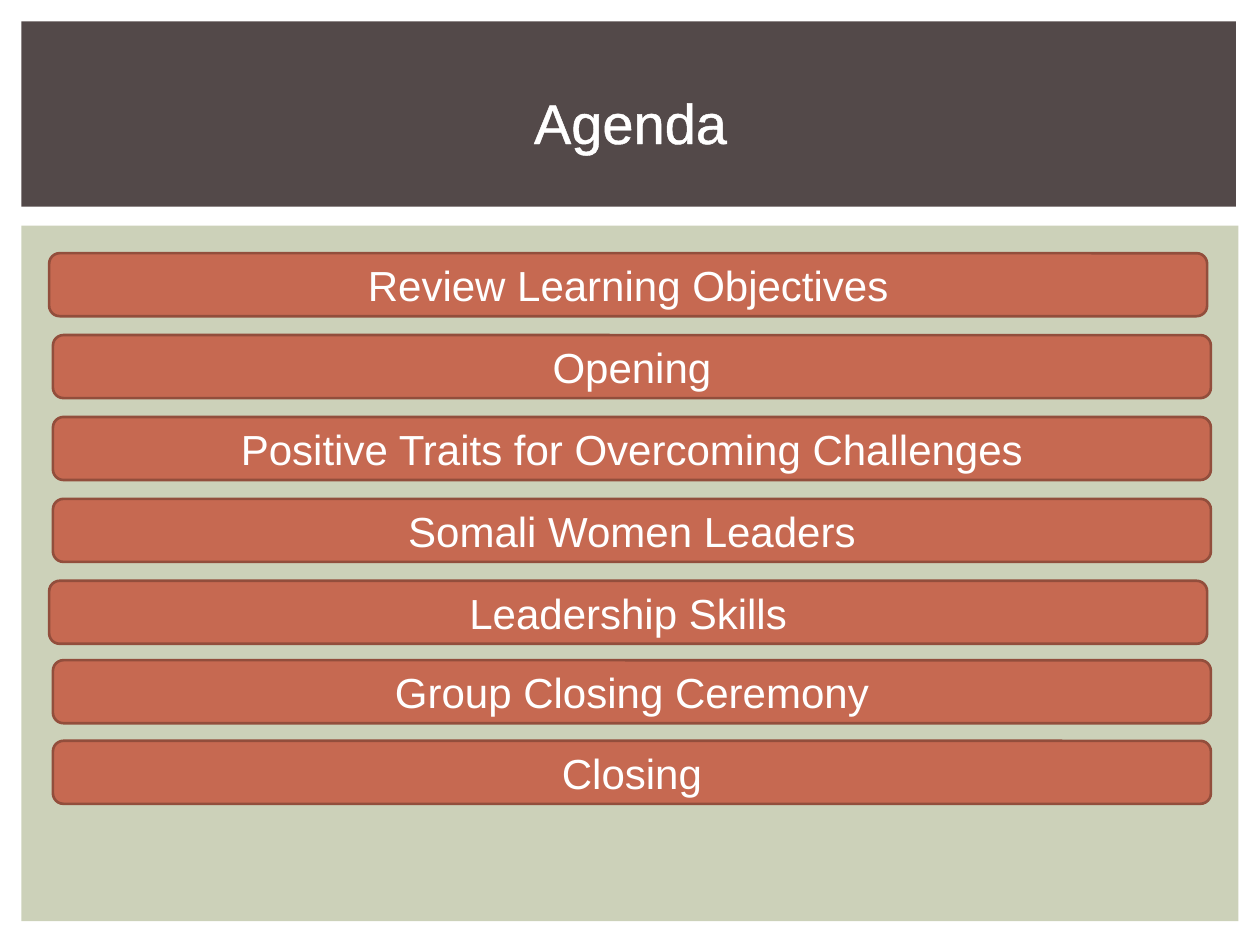
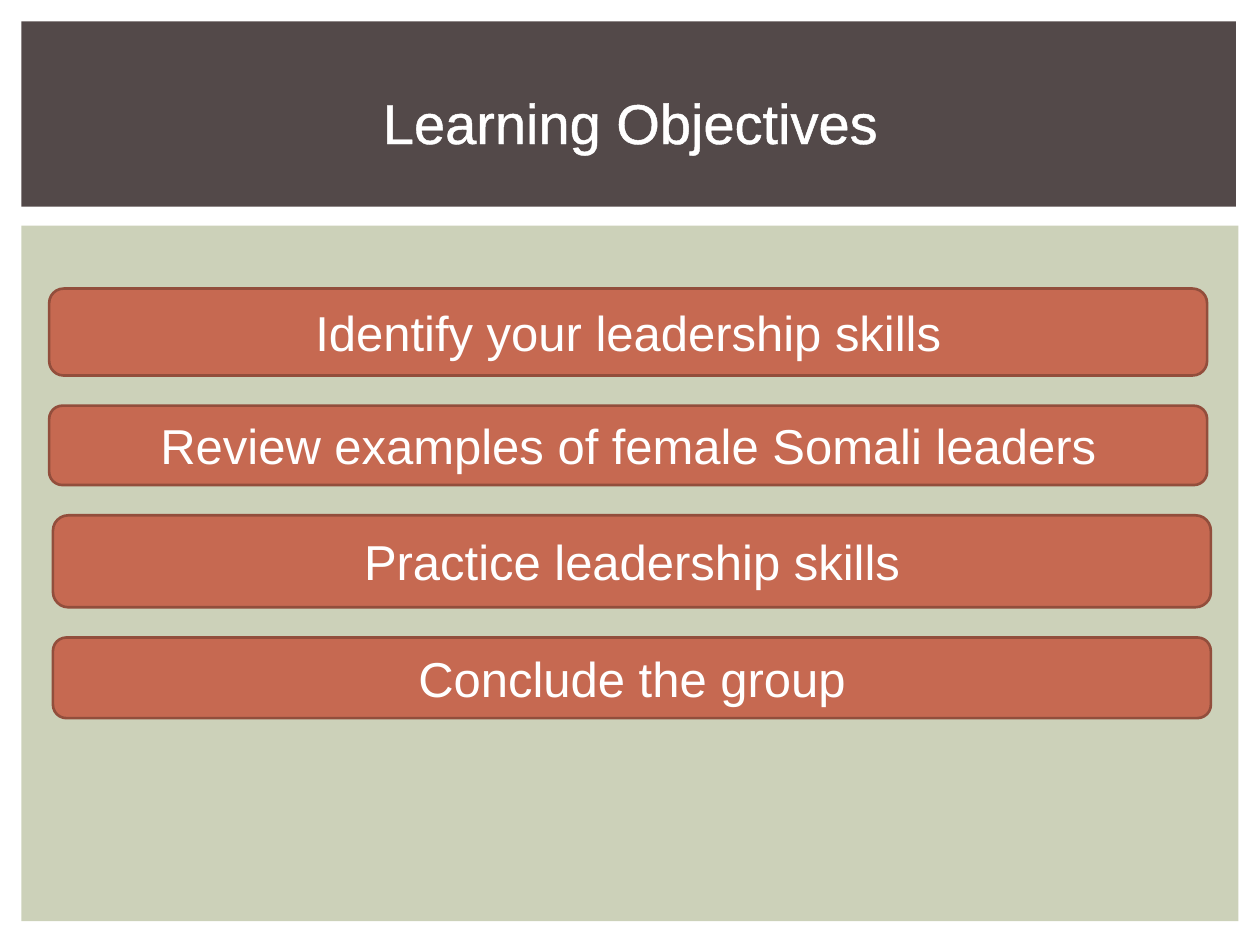
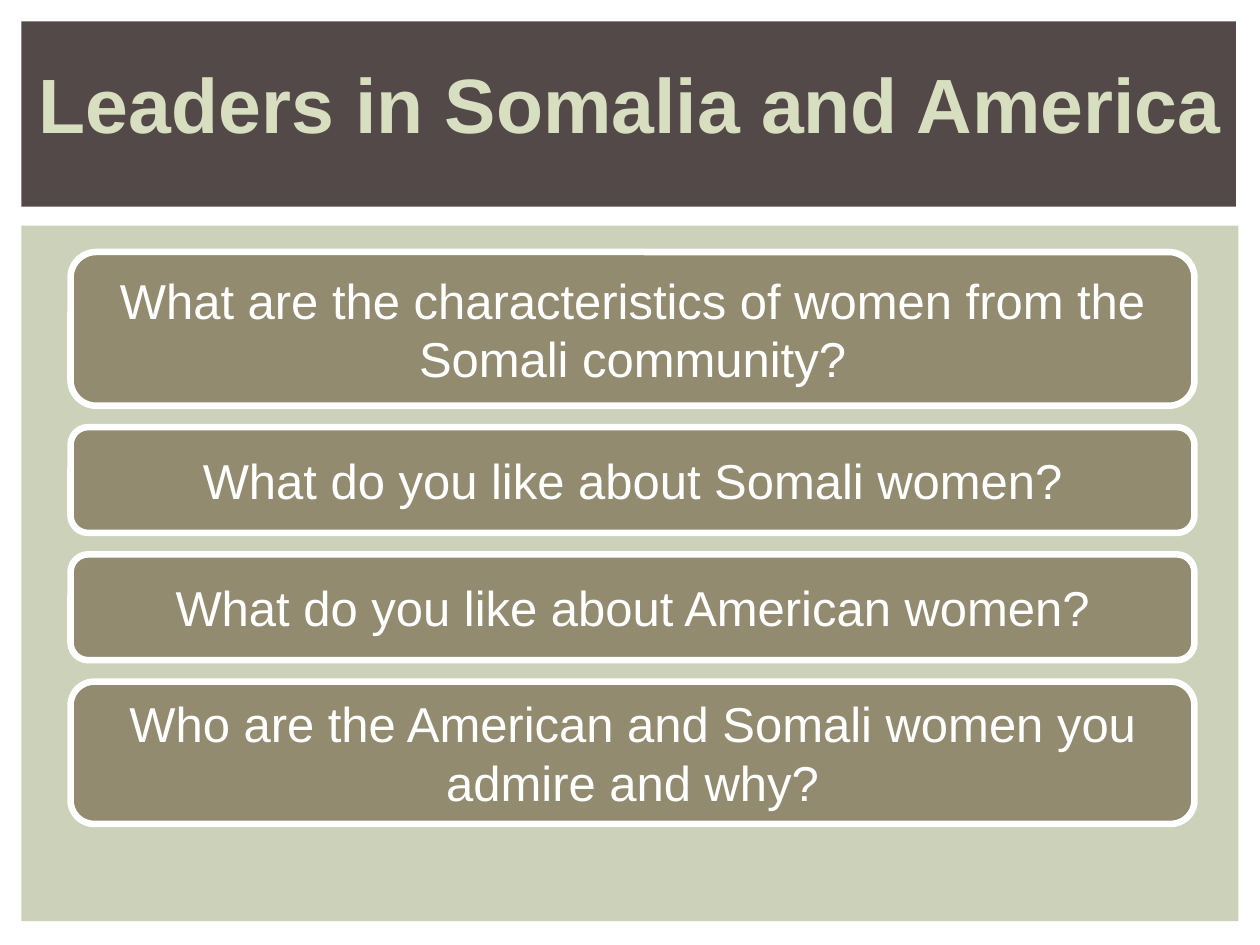
from lxml import etree
from pptx import Presentation
from pptx import util as u
from pptx.dml.color import RGBColor
from pptx.enum import shapes, text
from pptx.oxml import ns

WHITE = RGBColor(0xFF, 0xFF, 0xFF)
SAGE = RGBColor(0xCC, 0xD1, 0xB9)
PALE_SAGE = RGBColor(0xD8, 0xDE, 0xC0)
UMBER = RGBColor(0x53, 0x49, 0x49)
DARK_UMBER = RGBColor(0x56, 0x46, 0x46)
TERRACOTTA = RGBColor(0xC6, 0x69, 0x51)
DARK_TERRACOTTA = RGBColor(0x92, 0x4E, 0x3C)
OLIVE = RGBColor(0x92, 0x8B, 0x70)

FONT = "Arial"
BANDS = [((0.17, 1.79, 9.66, 5.52), SAGE), ((0.17, 0.17, 9.64, 1.47), UMBER)]
TITLE_BOX = (0.42, 0.39, 9.17, 1.15)
WIDE_TITLE_BOX = (0.16, 0.4, 9.69, 0.84)
LEFT, RIGHT = 0, 0.03

AGENDA_MAIN = [
    ("Review Learning Objectives", LEFT, 0.5),
    ("Opening", RIGHT, 0.5),
    ("Positive Traits for Overcoming Challenges", RIGHT, 0.5),
    ("Somali Women Leaders", RIGHT, 0.5),
    ("Leadership Skills", LEFT, 0.5),
]
AGENDA_CLOSE = [
    ("Group Closing Ceremony", RIGHT, 0.5),
    ("Closing", RIGHT, 0.5),
]
OBJECTIVES = [
    ("Identify your leadership skills", LEFT, 0.69),
    ("Review examples of female Somali leaders", LEFT, 0.63),
    ("Practice leadership skills", RIGHT, 0.73),
    ("Conclude the group", RIGHT, 0.64),
]
QUESTIONS = [
    ("What are the characteristics of women from the Somali community?", LEFT, 1.22),
    ("What do you like about Somali women?", LEFT, 0.84),
    ("What do you like about American women?", LEFT, 0.84),
    ("Who are the American and Somali women you admire and why?", LEFT, 1.13),
]
TERRACOTTA_STYLE = (TERRACOTTA, DARK_TERRACOTTA, 1.5)
OLIVE_STYLE = (OLIVE, WHITE, 3.75)


def add_filled(slide, kind, box, fill):
    shape = slide.shapes.add_shape(kind, *map(u.Inches, box))
    shape.shadow.inherit = False
    shape.fill.solid()
    shape.fill.fore_color.rgb = fill
    return shape


def write(frame, words, size, color):
    paragraph = frame.paragraphs[0]
    paragraph.alignment = text.PP_ALIGN.CENTER
    run = paragraph.add_run()
    run.text = words
    run.font.name = FONT
    run.font.size = u.Pt(size)
    run.font.color.rgb = color
    return run


def outline(run, color, width):
    line = etree.Element(ns.qn("a:ln"), w=str(u.Pt(width)))
    fill = etree.SubElement(line, ns.qn("a:solidFill"))
    etree.SubElement(fill, ns.qn("a:srgbClr"), val=str(color))
    run.font.fill
    run.font.language_id
    run._r.get_or_add_rPr().insert(0, line)


def move_bands_to_layout(slide):
    tree = slide.slide_layout.shapes.element
    for order, (box, fill) in enumerate(BANDS):
        band = add_filled(slide, shapes.MSO_SHAPE.RECTANGLE, box, fill)
        band.line.fill.background()
        band.element.nvSpPr.cNvPr.set("id", str(20 + order))
        tree.insert(2 + order, band.element)


def add_title(slide, words, box=TITLE_BOX, size=32, color=WHITE, edge=(WHITE, 1.45),
              anchor=text.MSO_ANCHOR.MIDDLE, bold=False, wrap=True):
    title = slide.shapes.title
    title.left, title.top, title.width, title.height = map(u.Inches, box)
    frame = title.text_frame
    frame.auto_size = text.MSO_AUTO_SIZE.NONE
    frame.word_wrap = wrap
    frame.vertical_anchor = anchor
    run = write(frame, words, size, color)
    run.font.bold = bold
    outline(run, *edge)


def stack_cards(slide, cards, left, top, width, gap, size, style):
    fill, edge, edge_width = style
    for words, shift, height in cards:
        card = add_filled(slide, shapes.MSO_SHAPE.ROUNDED_RECTANGLE,
                          (left + shift, top, width, height), fill)
        card.line.color.rgb = edge
        card.line.width = u.Pt(edge_width)
        card.text_frame.word_wrap = True
        card.text_frame.vertical_anchor = text.MSO_ANCHOR.MIDDLE
        write(card.text_frame, words, size, WHITE)
        top += height + gap


def build_agenda(slide):
    add_title(slide, "Agenda")
    stack_cards(slide, AGENDA_MAIN, 0.39, 2.01, 9.19, 0.15, 24, TERRACOTTA_STYLE)
    stack_cards(slide, AGENDA_CLOSE, 0.39, 5.24, 9.19, 0.14, 24, TERRACOTTA_STYLE)


def build_objectives(slide):
    add_title(slide, "Learning Objectives")
    stack_cards(slide, OBJECTIVES, 0.39, 2.29, 9.19, 0.24, 28, TERRACOTTA_STYLE)


def build_questions(slide):
    add_title(slide, "Leaders in Somalia and America", WIDE_TITLE_BOX, 44, PALE_SAGE,
              (DARK_UMBER, 1), text.MSO_ANCHOR.TOP, bold=True, wrap=False)
    stack_cards(slide, QUESTIONS, 0.56, 2, 8.92, 0.17, 28, OLIVE_STYLE)


def main():
    presentation = Presentation()
    presentation.slide_width = u.Inches(10)
    presentation.slide_height = u.Inches(7.5)
    layout = presentation.slide_layouts.get_by_name("Title Only")
    for number, build in enumerate((build_agenda, build_objectives, build_questions)):
        slide = presentation.slides.add_slide(layout)
        if number == 0:
            move_bands_to_layout(slide)
        build(slide)
    presentation.save("out.pptx")


if __name__ == "__main__":
    main()
